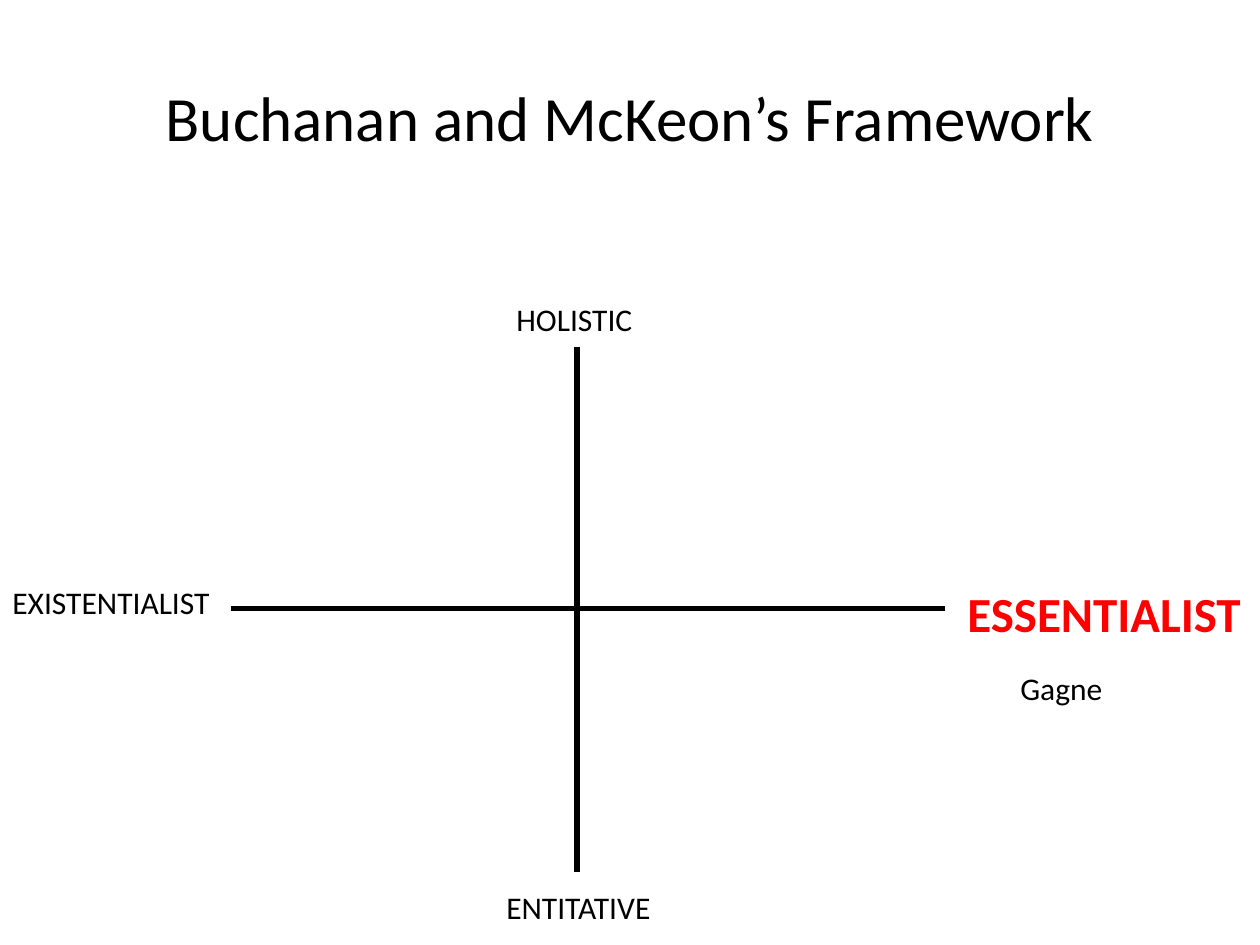
import pptx
import pptx.util
import pptx.dml.color
import pptx.enum.shapes
import pptx.enum.text
import pptx.oxml.ns
import lxml.etree

Inches, Pt = pptx.util.Inches, pptx.util.Pt

# Content
TITLE = "Buchanan and McKeon’s Framework"
TITLE_BOX = (0, 0.3, 10, 1.25)
AXES = [  # x1, y1, x2, y2
    (4.58, 2.75, 4.58, 6.92),
    (1.83, 4.83, 7.5, 4.83),
]
PLAIN = {"size": Pt(18), "bold": False}
STRONG = {"size": Pt(28), "bold": True}
LABELS = [  # text, box, format, colour
    ("ENTITATIVE", (3.92, 7, 1.42, 0.4), PLAIN, "000000"),
    ("HOLISTIC", (4, 2.33, 1.42, 0.4), PLAIN, "000000"),
    ("ESSENTIALIST", (7.58, 4.58, 2.42, 0.57), STRONG, "FF0000"),
    ("EXISTENTIALIST", (0, 4.58, 2, 0.4), PLAIN, "000000"),
    ("Gagne", (8, 5.26, 1, 0.4), PLAIN, "000000"),
]


def rgb(value):
    return pptx.dml.color.RGBColor.from_string(value)


def write(tf, text, fmt, color):
    tf.word_wrap = True
    p = tf.paragraphs[0]
    r = p.add_run()
    r.text = text
    for name, value in {"name": "Calibri", **fmt}.items():
        setattr(r.font, name, value)
    r.font.color.rgb = rgb(color)
    return p


def add_axis(s, ends):
    line = s.shapes.add_connector(
        pptx.enum.shapes.MSO_CONNECTOR.STRAIGHT, *map(Inches, ends))
    line.line.width = Pt(3)
    line.line.color.rgb = rgb("000000")
    lxml.etree.SubElement(line._element.spPr, pptx.oxml.ns.qn("a:effectLst"))


def add_label(s, text, box, fmt, color):
    tf = s.shapes.add_textbox(*map(Inches, box)).text_frame
    write(tf, text, fmt, color)
    tf.auto_size = pptx.enum.text.MSO_AUTO_SIZE.SHAPE_TO_FIT_TEXT


def main():
    prs = pptx.Presentation()
    prs.slide_width, prs.slide_height = Inches(10), Inches(7.5)
    s = prs.slides.add_slide(prs.slide_layouts[5])

    # Title
    sp = s.shapes.title
    sp.left, sp.top, sp.width, sp.height = map(Inches, TITLE_BOX)
    p = write(sp.text_frame, TITLE, {"size": Pt(36)}, "000000")
    p.alignment = pptx.enum.text.PP_ALIGN.CENTER
    sp.text_frame.vertical_anchor = pptx.enum.text.MSO_ANCHOR.MIDDLE

    # Axes and their labels
    for ends in AXES:
        add_axis(s, ends)
    for label in LABELS:
        add_label(s, *label)

    prs.save("out.pptx")


if __name__ == "__main__":
    main()
